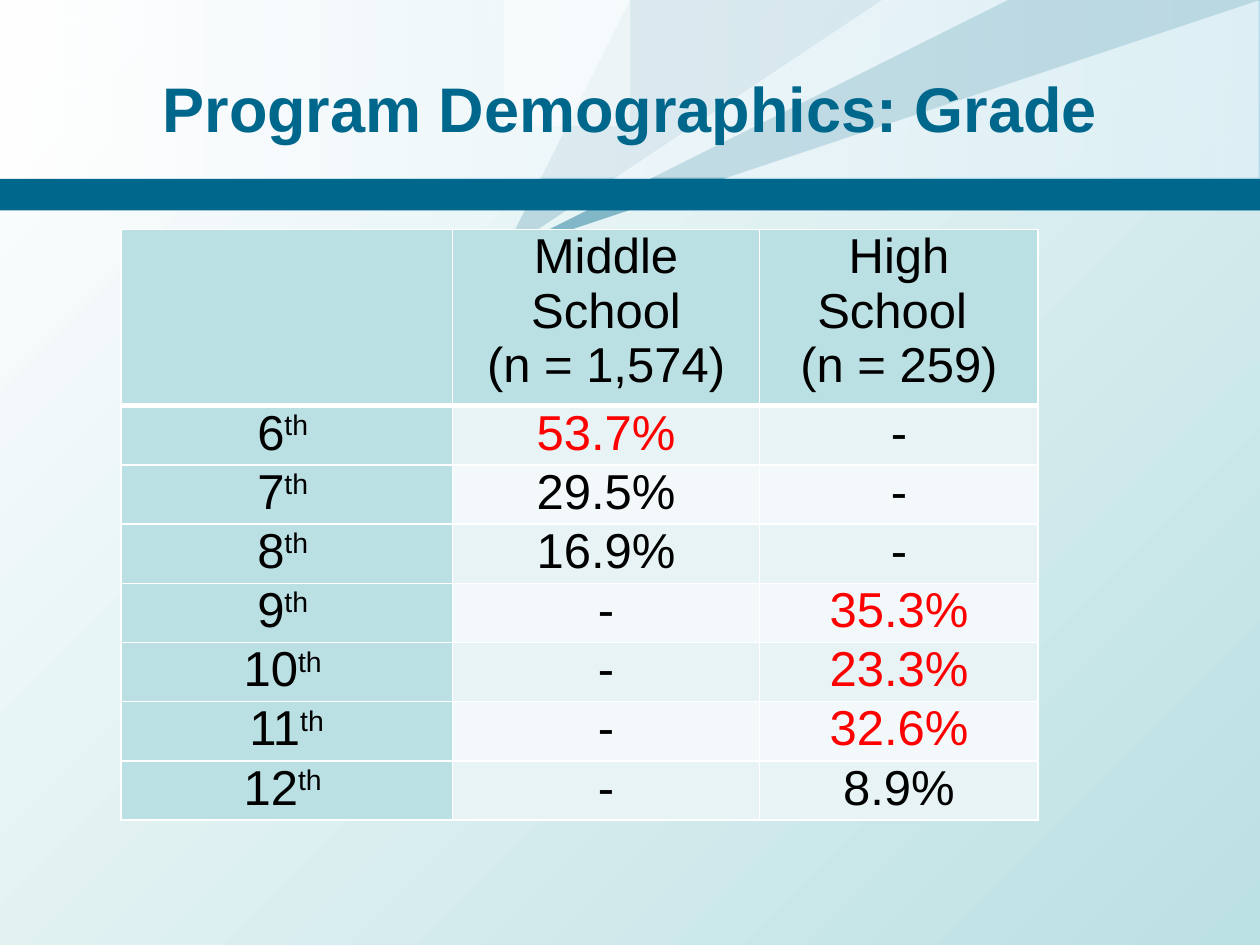
from pptx import Presentation, util as u
from pptx.dml.color import RGBColor
from pptx.enum import shapes, text
from pptx.oxml.ns import qn
from lxml import etree

COLORS = {
    "white": "FFFFFF", "teal": "BBE0E3", "sky": "A9D7E7", "mist": "4F91A9",
    "blue": "00678C", "black": "000000", "red": "FF0000",
    "band_dark": "E7F3F4", "band_light": "F3F9FA",
}
FONT = "Arial"
HEADERS = [[], ["Middle School", "(n = 1,574)"], ["High School ", "(n = 259)"]]
GRADES = [
    ("6", "53.7%", "-"), ("7", "29.5%", "-"), ("8", "16.9%", "-"),
    ("9", "-", "35.3%"), ("10", "-", "23.3%"), ("11", "-", "32.6%"),
    ("12", "-", "8.9%"),
]
HIGHLIGHTS = {"53.7%", "35.3%", "23.3%", "32.6%"}


def rgb(name):
    return RGBColor.from_string(COLORS[name])


def set_alpha(color_element, percent):
    etree.SubElement(color_element, qn("a:alpha"), val=str(percent * 1000))


def paint(shape, color, alpha=100):
    shape.shadow.inherit = False
    shape.line.fill.background()
    shape.fill.solid()
    shape.fill.fore_color.rgb = rgb(color)
    if alpha < 100:
        set_alpha(shape._element.spPr.find(qn("a:solidFill"))[0], alpha)


def paint_gradient(fill, start, end, angle):
    fill.gradient()
    fill.gradient_angle = angle
    for stop, color in zip(fill.gradient_stops, (start, end)):
        stop.color.rgb = rgb(color)


def add_box(page, left, top, width, height):
    return page.shapes.add_shape(
        shapes.MSO_SHAPE.RECTANGLE, *map(u.Inches, (left, top, width, height)))


def add_outline(page, points, color, alpha):
    builder = page.shapes.build_freeform(*points[0], scale=u.Inches(1))
    builder.add_line_segments(points[1:], close=True)
    paint(builder.convert_to_shape(), color, alpha)


def curve(a, b, c, d, steps=40):
    """Points along a cubic curve."""
    return [
        tuple((1 - t) ** 3 * p + 3 * (1 - t) ** 2 * t * q
              + 3 * (1 - t) * t ** 2 * r + t ** 3 * s
              for p, q, r, s in zip(a, b, c, d))
        for t in (step / steps for step in range(steps + 1))]


def add_text(para, content, size=28, color="black", bold=False, raised=False):
    para.alignment = text.PP_ALIGN.CENTER
    span = para.add_run()
    span.text = content
    span.font.name = FONT
    span.font.size = u.Pt(size)
    span.font.bold = bold
    span.font.color.rgb = rgb(color)
    if raised:
        span.font._element.set("baseline", "30000")


def add_banner(page, left, top, width, height):
    backdrop = add_box(page, left, top, width, height)
    paint(backdrop, "white")
    paint_gradient(backdrop.fill, "white", "sky", 0)
    last_stop = backdrop._element.spPr.findall(".//" + qn("a:gs"))[-1]
    set_alpha(last_stop[0], 72)

    # Light rays
    bar_height = 0.25
    bar_top = top + height - bar_height
    add_outline(page, [(left + 5.33, top), (left + 7.39, top),
                       (left + 3.51, top + 1.58)], "mist", 29)
    add_outline(page, [(left + 7.92, top), (left + width - 0.01, top),
                       (left + 3.51, top + height)], "blue", 43)

    # Bar and curved sweep
    paint(add_box(page, left, bar_top, width, bar_height), "blue")
    tip = (left + 0.01, top + 0.01)
    inner, outer = (left + 5.64, top + 1.41), (left + 7.83, top + 1.41)
    sweep = (curve(inner, (left + 4.51, top + 0.2), tip, tip)
             + curve(tip, (left + 6.93, top + 0.27), outer, outer))
    add_outline(page, sweep, "white", 50)

    # Veil behind the title
    paint(add_box(page, left, top, width - 0.01, 1.41), "white", 55)


def place_title(page, content, left, top, width, height):
    title = page.shapes.title
    title.left, title.top, title.width, title.height = map(
        u.Inches, (left, top, width, height))
    frame = title.text_frame
    frame.word_wrap = True
    frame.auto_size = text.MSO_AUTO_SIZE.NONE
    frame.vertical_anchor = text.MSO_ANCHOR.MIDDLE
    add_text(frame.paragraphs[0], content, size=36, color="blue", bold=True)
    page.shapes._spTree.append(title._element)  # in front of the banner


def format_cell(cell, fill, top=1, bottom=1):
    cell.margin_left = cell.margin_right = u.Inches(0.07)
    cell.margin_top = cell.margin_bottom = 0
    properties = cell._tc.get_or_add_tcPr()
    for side, points in (("L", 1), ("R", 1), ("T", top), ("B", bottom)):
        line = etree.SubElement(properties, qn(f"a:ln{side}"), w=str(u.Pt(points)))
        solid = etree.SubElement(line, qn("a:solidFill"))
        etree.SubElement(solid, qn("a:srgbClr"), val=COLORS["white"])
    cell.fill.solid()
    cell.fill.fore_color.rgb = rgb(fill)


def add_grade_table(page, left, top, widths, header_height, row_height):
    height = header_height + row_height * len(GRADES)
    table = page.shapes.add_table(
        len(GRADES) + 1, len(widths),
        *map(u.Inches, (left, top, sum(widths), height))).table
    table.first_row = table.horz_banding = False
    for column, width in zip(table.columns, widths):
        column.width = u.Inches(width)
    for index, row in enumerate(table.rows):
        row.height = u.Inches(row_height if index else header_height)

    # Header row
    for column, lines in enumerate(HEADERS):
        cell = table.cell(0, column)
        format_cell(cell, "teal", bottom=3)
        frame = cell.text_frame
        for index, content in enumerate(lines):
            add_text(frame.add_paragraph() if index else frame.paragraphs[0], content)

    # Grade rows
    for row, (grade, *shares) in enumerate(GRADES, 1):
        rule = 3 if row == 1 else 1
        label = table.cell(row, 0)
        format_cell(label, "teal", top=rule)
        para = label.text_frame.paragraphs[0]
        add_text(para, grade)
        add_text(para, "th" if grade == "11" else "th ", raised=True)
        for column, share in enumerate(shares, 1):
            cell = table.cell(row, column)
            format_cell(cell, "band_dark" if row % 2 else "band_light", top=rule)
            add_text(cell.text_frame.paragraphs[0], share,
                     color="red" if share in HIGHLIGHTS else "black")


def main():
    deck = Presentation()
    deck.slide_width, deck.slide_height = u.Inches(10), u.Inches(7.5)
    page = deck.slides.add_slide(deck.slide_layouts.get_by_name("Title Only"))
    paint_gradient(page.background.fill, "white", "teal", 315)
    add_banner(page, 0, 0, 10, 1.67)
    place_title(page, "Program Demographics: Grade", 0.5, 0.3, 9, 1.11)
    add_grade_table(page, 0.96, 1.82, (2.63, 2.44, 2.21), 1.4, 0.47)
    deck.save("out.pptx")


if __name__ == "__main__":
    main()
